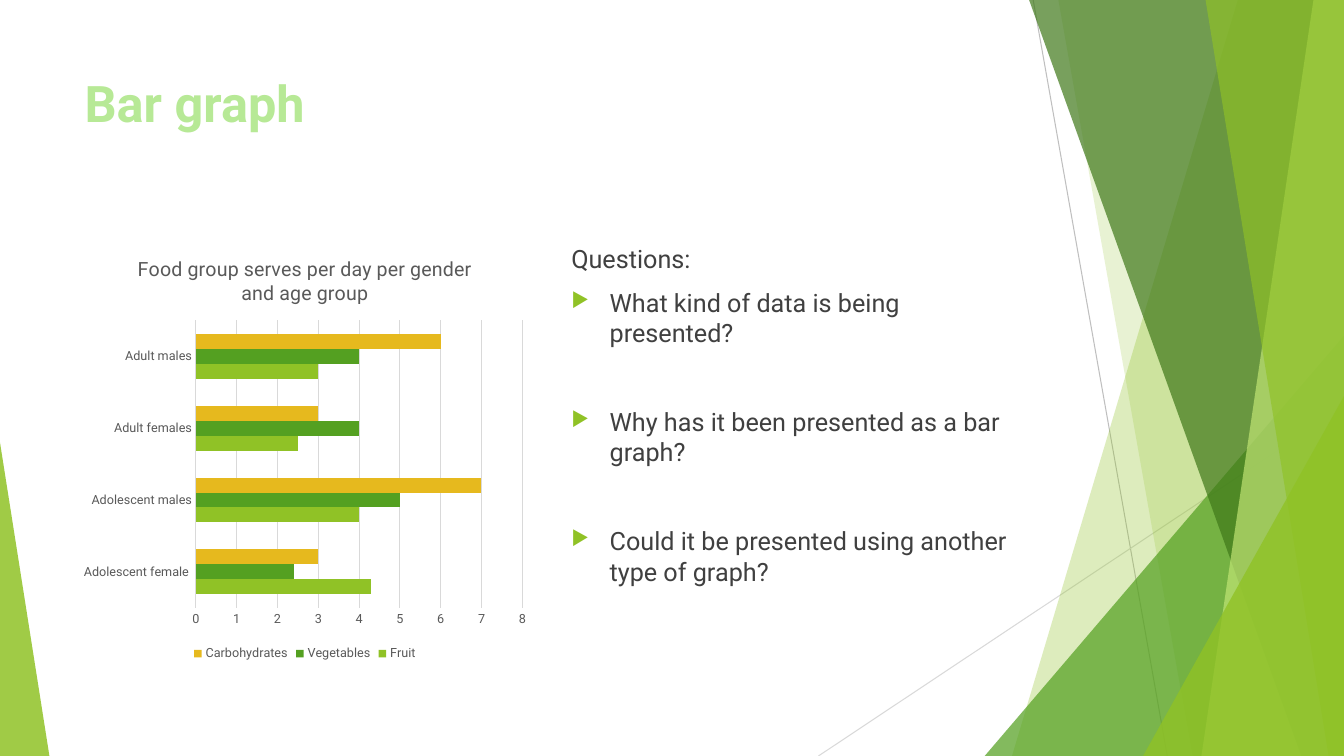
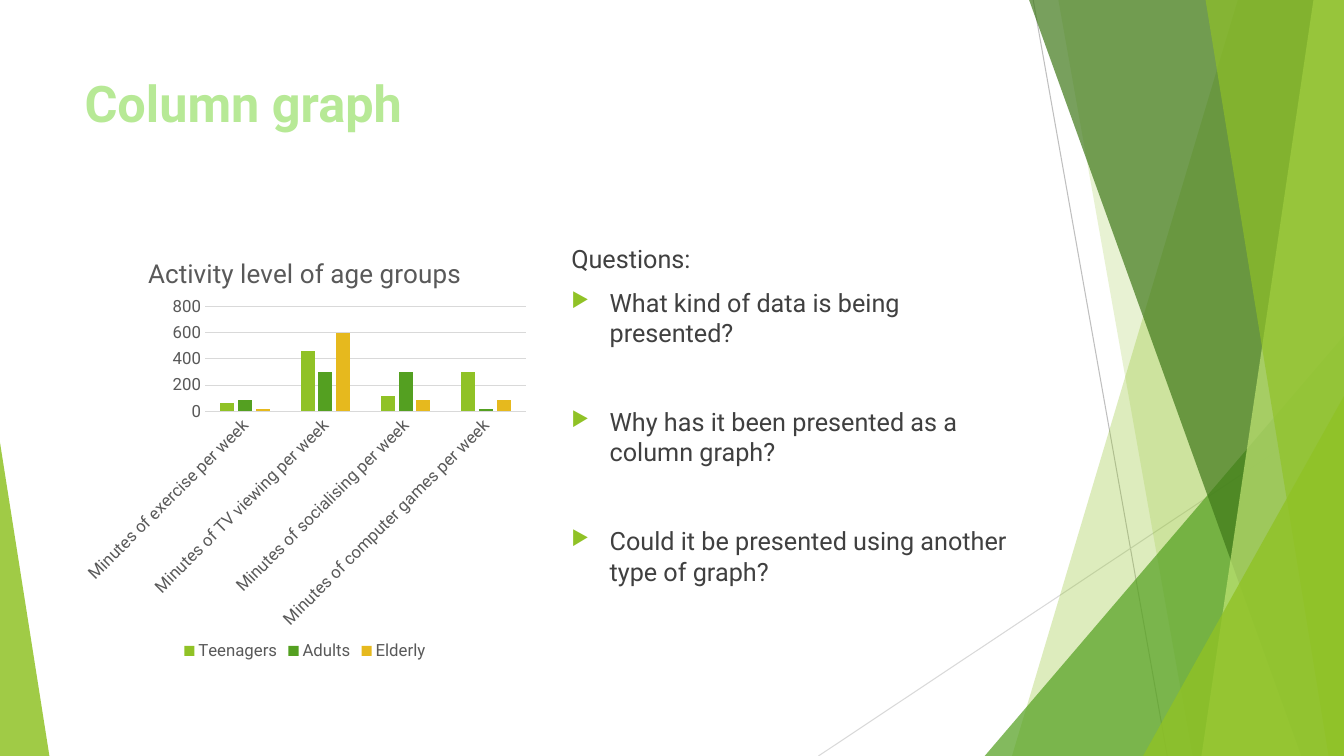
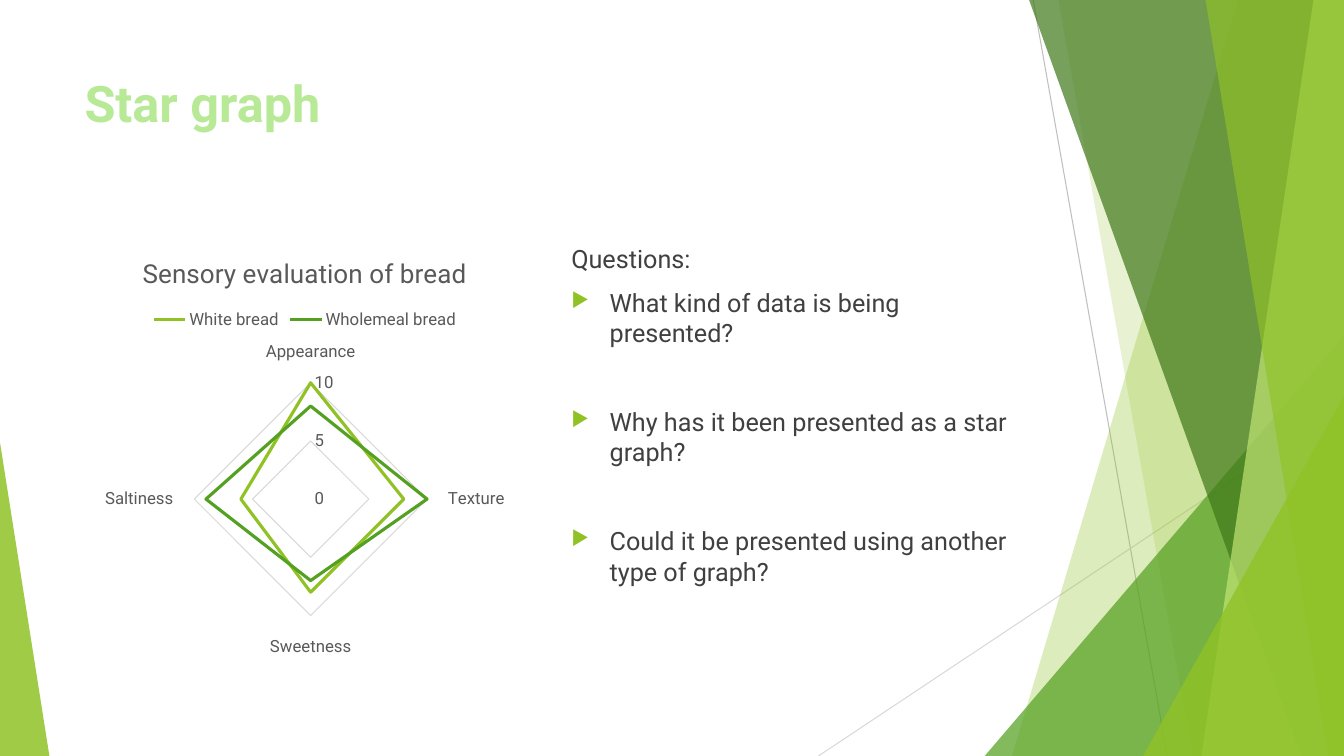
from lxml.etree import SubElement
from pptx import Presentation
from pptx.chart.data import CategoryChartData
from pptx.dml.color import RGBColor
from pptx.enum.chart import XL_CHART_TYPE, XL_LEGEND_POSITION, XL_TICK_MARK
from pptx.enum.shapes import MSO_CONNECTOR, MSO_SHAPE
from pptx.oxml.ns import qn
from pptx.util import Pt

WIDTH, HEIGHT = 960, 540
FONT = "Roboto"
LIME, GREEN, GOLD = "90C226", "54A021", "E6B91E"
PALETTE = [LIME, GREEN, GOLD]
PALE, DARK, GREY, RULE = "B7E996", "404040", "595959", "D9D9D9"

TITLE_AT = (53.3, 48.2, 677, 104)
CHART_AT = (53.3, 170, 329, 305)
QUESTIONS_AT = (401, 170, 330, 305)
HANGING, FIRST_GAP, QUESTION_GAP = 27.4, 10, 42

# Lines: start x, start y, end x, end y, colour
THIN_LINES = [
    (738, 0, 833.8, HEIGHT, "BFBFBF"),
    (WIDTH, 290.2, 584.6, HEIGHT, RULE),
]
# Bands reach the right edge: top left x, bottom left x, colour, opacity.
# Triangles: left, top, width, apex position, colour, opacity.
BACKDROP = [
    ("band", 884.2, 722.9, LIME, 30),
    ("band", 756, 851.8, LIME, 20),
    ("triangle", 703.4, 239.8, 256.6, 1, GREEN, 72),
    ("band", 735.1, 929.5, "3F7819", 70),
    ("band", 938.2, 858.2, "C0E474", 70),
    ("band", 861.1, 949, LIME, 65),
    ("triangle", 816.5, 283, 143.5, 1, LIME, 80),
    ("triangle", 0, 316.1, 35.3, 0, LIME, 85),
]

QUESTIONS = [
    "What kind of data is being presented?",
    "Why has it been presented as a {} graph?",
    "Could it be presented using another type of graph?",
]

SLIDES = [
    dict(
        title="Bar graph", kind="bar",
        type=XL_CHART_TYPE.BAR_CLUSTERED,
        heading="Food group serves per day per gender and age group",
        heading_size=14, label_size=9,
        legend=XL_LEGEND_POSITION.BOTTOM,
        plot=dict(gap_width=182, overlap=0),
        categories=["Adolescent female ", "Adolescent males",
                    "Adult females", "Adult males"],
        series={
            "Fruit": [4.3, 4, 2.5, 3],
            "Vegetables": [2.4, 5, 4, 4],
            "Carbohydrates": [3, 7, 3, 6],
        },
    ),
    dict(
        title="Column graph", kind="column",
        type=XL_CHART_TYPE.COLUMN_CLUSTERED,
        heading="Activity level of age groups",
        heading_size=18.6, label_size=12, label_angle=-45,
        legend=XL_LEGEND_POSITION.BOTTOM,
        plot=dict(gap_width=219, overlap=-27),
        categories=["Minutes of exercise per week",
                    "Minutes of TV viewing per week",
                    "Minutes of socialising per week",
                    "Minutes of computer games per week"],
        series={
            "Teenagers": [60, 460, 120, 300],
            "Adults": [90, 300, 300, 20],
            "Elderly": [20, 600, 90, 90],
        },
    ),
    dict(
        title="Star graph", kind="star",
        type=XL_CHART_TYPE.RADAR,
        heading="Sensory evaluation of bread",
        heading_size=18.6, label_size=12,
        legend=XL_LEGEND_POSITION.TOP,
        plot={},
        categories=["Appearance", "Texture", "Sweetness", "Saltiness"],
        series={
            "White bread": [10, 8, 8, 6],
            "Wholemeal bread": [8, 10, 7, 9],
        },
    ),
]


def rgb(code):
    return RGBColor.from_string(code)


def points(values):
    return [Pt(value) for value in values]


def assign(target, values):
    for name, value in values.items():
        setattr(target, name, value)


def style_font(font, size, color, bold=False):
    assign(font, dict(name=FONT, size=Pt(size), bold=bold))
    font.color.rgb = rgb(color)


def style_line(line, color, width=0.75):
    line.color.rgb = rgb(color)
    line.width = Pt(width)


def fill_glass(shape, color, opacity):
    """Give a shape a see-through fill, without line or shadow."""
    shape.shadow.inherit = False
    shape.line.fill.background()
    shape.fill.solid()
    shape.fill.fore_color.rgb = rgb(color)
    tint = next(shape.element.iter(qn("a:srgbClr")))
    SubElement(tint, qn("a:alpha"), val=str(opacity * 1000))


def add_band(page, top_x, bottom_x, color, opacity):
    builder = page.shapes.build_freeform(Pt(top_x), 0)
    corners = [(WIDTH, 0), (WIDTH, HEIGHT), (bottom_x, HEIGHT)]
    builder.add_line_segments([points(corner) for corner in corners])
    fill_glass(builder.convert_to_shape(), color, opacity)


def add_triangle(page, left, top, width, apex, color, opacity):
    box = points((left, top, width, HEIGHT - top))
    triangle = page.shapes.add_shape(MSO_SHAPE.ISOSCELES_TRIANGLE, *box)
    triangle.adjustments[0] = apex
    fill_glass(triangle, color, opacity)


def add_backdrop(page):
    for *ends, color in THIN_LINES:
        line = page.shapes.add_connector(MSO_CONNECTOR.STRAIGHT, *points(ends))
        style_line(line.line, color)
        SubElement(line.element.spPr, qn("a:effectLst"))
    draw = {"band": add_band, "triangle": add_triangle}
    for form, *values in BACKDROP:
        draw[form](page, *values)


def add_text_frame(page, place):
    frame = page.shapes.add_textbox(*points(place)).text_frame
    frame.word_wrap = True
    return frame


def add_title(page, text):
    span = add_text_frame(page, TITLE_AT).paragraphs[0].add_run()
    span.text = text
    style_font(span.font, 36, PALE, bold=True)
    properties = span.font.fill and span.text and span._r.get_or_add_rPr()
    outline = SubElement(properties, qn("a:ln"), w=str(Pt(1.75)))
    fill = SubElement(outline, qn("a:solidFill"))
    SubElement(fill, qn("a:srgbClr"), val=GREEN)
    properties.insert(0, outline)


def add_bullet(para):
    properties = para._p.get_or_add_pPr()
    properties.set("marL", str(Pt(HANGING)))
    properties.set("indent", str(-Pt(HANGING)))
    color = SubElement(properties, qn("a:buClr"))
    SubElement(color, qn("a:srgbClr"), val=LIME)
    SubElement(properties, qn("a:buSzPct"), val="80000")
    SubElement(properties, qn("a:buChar"), char="▶")


def add_questions(page, kind):
    frame = add_text_frame(page, QUESTIONS_AT)
    for index, text in enumerate(["Questions:", *QUESTIONS]):
        para = frame.paragraphs[0] if index == 0 else frame.add_paragraph()
        para.space_before = Pt(QUESTION_GAP if index > 1 else FIRST_GAP)
        if index:
            add_bullet(para)
        span = para.add_run()
        span.text = text.format(kind)
        style_font(span.font, 18, DARK)


def style_axes(chart, label_size, label_angle):
    for axis in (chart.category_axis, chart.value_axis):
        assign(axis, dict(major_tick_mark=XL_TICK_MARK.NONE,
                          minor_tick_mark=XL_TICK_MARK.NONE,
                          has_minor_gridlines=False))
        style_font(axis.tick_labels.font, label_size, GREY)
    category, value = chart.category_axis, chart.value_axis
    category.has_major_gridlines = False
    style_line(category.format.line, RULE)
    value.has_major_gridlines = True
    style_line(value.major_gridlines.format.line, RULE)
    value.format.line.fill.background()
    assign(value.tick_labels, dict(number_format="General",
                                   number_format_is_linked=False))
    if label_angle:
        body = next(category.tick_labels.font and
                    category._element.iter(qn("a:bodyPr")))
        body.set("rot", str(label_angle * 60000))


def add_graph(page, content):
    data = CategoryChartData()
    data.categories = content["categories"]
    for name, values in content["series"].items():
        data.add_series(name, values)
    chart = page.shapes.add_chart(
        content["type"], *points(CHART_AT), data).chart
    style_font(chart.font, 10, "000000")

    chart.has_title = True
    heading = chart.chart_title.text_frame
    heading.text = content["heading"]
    style_font(heading.paragraphs[0].runs[0].font,
               content["heading_size"], GREY)

    chart.has_legend = True
    assign(chart.legend, dict(position=content["legend"],
                              include_in_layout=False))
    style_font(chart.legend.font, content["label_size"], GREY)
    style_axes(chart, content["label_size"], content.get("label_angle"))

    plot = chart.plots[0]
    assign(plot, dict(content["plot"], vary_by_categories=False))
    for series, color in zip(plot.series, PALETTE):
        if content["type"] == XL_CHART_TYPE.RADAR:
            style_line(series.format.line, color, 2.25)
            series.smooth = False
        else:
            series.format.fill.solid()
            series.format.fill.fore_color.rgb = rgb(color)
            series.invert_if_negative = False


def main():
    deck = Presentation()
    deck.slide_width, deck.slide_height = Pt(WIDTH), Pt(HEIGHT)
    for content in SLIDES:
        page = deck.slides.add_slide(deck.slide_layouts[6])
        add_backdrop(page)
        add_title(page, content["title"])
        add_graph(page, content)
        add_questions(page, content["kind"])
    deck.save("out.pptx")


if __name__ == "__main__":
    main()
